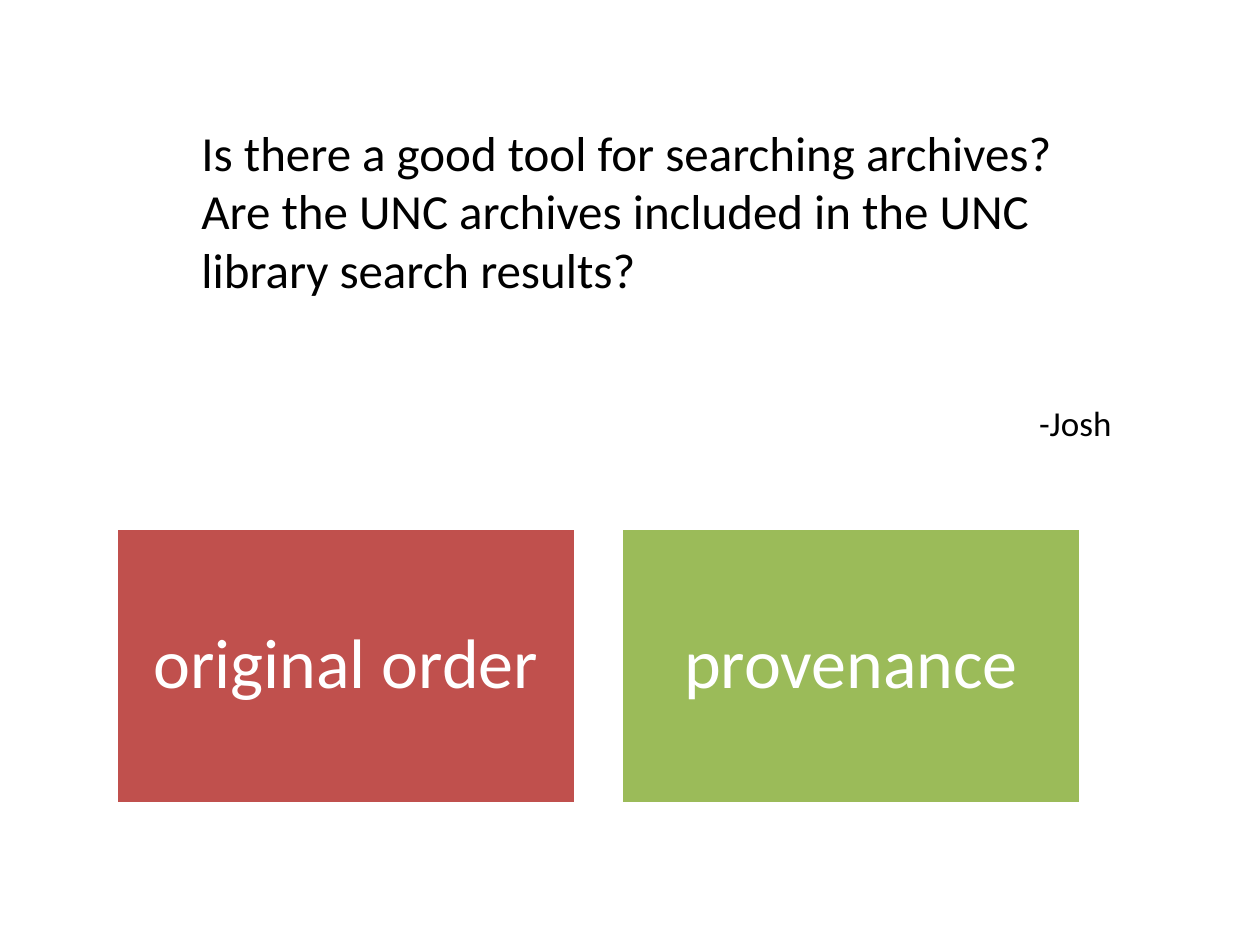
from pptx import Presentation
from pptx.dml.color import RGBColor
from pptx.enum import shapes, text
from pptx.util import Inches, Pt

FONT = "Calibri"
CONCEPTS = [("original order", "C0504D"), ("provenance", "9BBB59")]


def color(value):
    """Turn a hex string into a colour."""
    return RGBColor.from_string(value)


def add_run(paragraph, words, size, tint):
    """Append one styled run to a paragraph."""
    run = paragraph.add_run()
    run.text = words
    run.font.name = FONT
    run.font.size = Pt(size)
    run.font.color.rgb = color(tint)


def add_question(slide, left, top, width, height):
    """Place the question with its asker's name below at the right."""
    box = slide.shapes.add_textbox(left, top, width, height)
    frame = box.text_frame
    frame.word_wrap = True
    frame.auto_size = text.MSO_AUTO_SIZE.SHAPE_TO_FIT_TEXT
    add_run(
        frame.paragraphs[0],
        "Is there a good tool for searching archives?  Are the UNC archives "
        "included in the UNC library search results?",
        28,
        "000000",
    )
    asker = frame.add_paragraph()
    asker.alignment = text.PP_ALIGN.RIGHT
    asker.space_before = Pt(58.6)
    add_run(asker, "-Josh", 20, "000000")


def add_concept(group, words, fill, left, top, width, height):
    """Place one coloured tile with a centred concept."""
    tile = group.shapes.add_shape(
        shapes.MSO_SHAPE.RECTANGLE, left, top, width, height
    )
    tile.shadow.inherit = False
    tile.fill.solid()
    tile.fill.fore_color.rgb = color(fill)
    tile.line.color.rgb = color("FFFFFF")
    tile.line.width = Pt(2)
    frame = tile.text_frame
    frame.word_wrap = True
    frame.vertical_anchor = text.MSO_ANCHOR.MIDDLE
    frame.margin_left = frame.margin_right = Inches(0.17)
    frame.margin_top = frame.margin_bottom = Inches(0.17)
    label = frame.paragraphs[0]
    label.alignment = text.PP_ALIGN.CENTER
    label.line_spacing = 0.9
    add_run(label, words, 40, "FFFFFF")


def add_concepts(slide, left, top, width, height):
    """Spread the concept tiles evenly across the given box."""
    gap = Inches(0.36)
    count = len(CONCEPTS)
    tile_width = (width - gap * (count - 1)) // count
    group = slide.shapes.add_group_shape()
    for index, (words, fill) in enumerate(CONCEPTS):
        tile_left = left + index * (tile_width + gap)
        add_concept(group, words, fill, tile_left, top, tile_width, height)


def main():
    """Build and save the slide."""
    deck = Presentation()
    deck.slide_width, deck.slide_height = Inches(10), Inches(7.5)
    slide = deck.slides.add_slide(deck.slide_layouts[6])
    add_question(slide, Inches(1.5), Inches(0.92), Inches(7.42), Inches(2.66))
    add_concepts(slide, Inches(0.92), Inches(4.19), Inches(7.66), Inches(2.19))
    deck.save("out.pptx")


if __name__ == "__main__":
    main()
